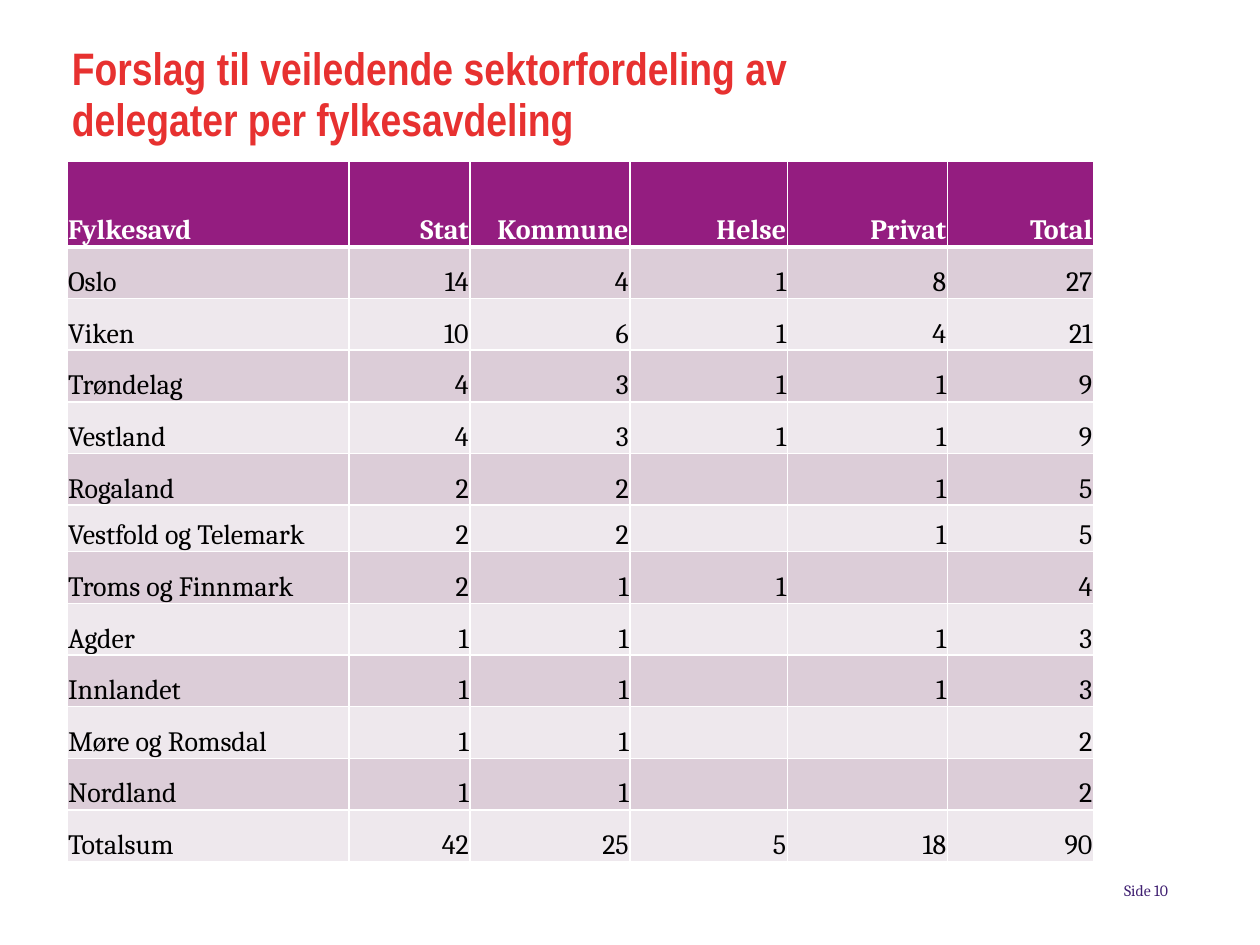
from lxml.etree import SubElement
from pptx import Presentation
from pptx.dml.color import RGBColor
from pptx.enum.text import MSO_ANCHOR, PP_ALIGN
from pptx.oxml.ns import qn
from pptx.util import Inches, Pt

TITLE = "Forslag til veiledende sektorfordeling av delegater per fylkesavdeling"
PAGE = "Side 10"
ROWS = [
    ("Fylkesavd", "Stat", "Kommune", "Helse", "Privat", "Total"),
    ("Oslo", "14", "4", "1", "8", "27"),
    ("Viken", "10", "6", "1", "4", "21"),
    ("Trøndelag", "4", "3", "1", "1", "9"),
    ("Vestland", "4", "3", "1", "1", "9"),
    ("Rogaland", "2", "2", "", "1", "5"),
    ("Vestfold og Telemark", "2", "2", "", "1", "5"),
    ("Troms og Finnmark", "2", "1", "1", "", "4"),
    ("Agder", "1", "1", "", "1", "3"),
    ("Innlandet", "1", "1", "", "1", "3"),
    ("Møre og Romsdal", "1", "1", "", "", "2"),
    ("Nordland", "1", "1", "", "", "2"),
    ("Totalsum", "42", "25", "5", "18", "90"),
]
COL_WIDTHS = [2.24, 0.96, 1.27, 1.25, 1.27, 1.16]
HEADER_HEIGHT, ROW_HEIGHT = 0.68, 0.41
SPECIAL_HEIGHTS = {0: HEADER_HEIGHT, 6: 0.37}

RED = RGBColor(0xE7, 0x31, 0x30)
INDIGO = RGBColor(0x3F, 0x1F, 0x71)
PURPLE = RGBColor(0x94, 0x1D, 0x80)
BAND_DARK = RGBColor(0xDC, 0xCD, 0xD8)
BAND_LIGHT = RGBColor(0xEE, 0xE8, 0xED)
WHITE = RGBColor(0xFF, 0xFF, 0xFF)
BLACK = RGBColor(0, 0, 0)


def add_run(p, text, font, size, color, bold=False):
    r = p.add_run()
    r.text = text
    r.font.name = font
    r.font.size = Pt(size)
    r.font.bold = bold
    r.font.color.rgb = color


def add_text_box(slide, left, top, width, height, anchor):
    sp = slide.shapes.add_textbox(Inches(left), Inches(top), Inches(width), Inches(height))
    tf = sp.text_frame
    tf.word_wrap = True
    tf.vertical_anchor = anchor
    tf.margin_left = tf.margin_top = tf.margin_right = tf.margin_bottom = 0
    return tf.paragraphs[0]


def set_borders(cell, widths):
    tc_pr = cell._tc.get_or_add_tcPr()
    for side, width in widths.items():
        ln = SubElement(tc_pr, qn(f"a:ln{side}"), w=str(Pt(width)))
        fill = SubElement(ln, qn("a:solidFill"))
        SubElement(fill, qn("a:srgbClr"), val=str(WHITE))


def format_cell(cell, text, row, col):
    set_borders(cell, {"L": 1, "R": 1, "T": 3 if row == 1 else 1, "B": 3 if row == 0 else 1})
    cell.fill.solid()
    cell.fill.fore_color.rgb = PURPLE if row == 0 else BAND_DARK if row % 2 else BAND_LIGHT
    cell.vertical_anchor = MSO_ANCHOR.BOTTOM
    cell.margin_left = cell.margin_top = cell.margin_right = Inches(0.01)
    cell.margin_bottom = 0
    p = cell.text_frame.paragraphs[0]
    p.alignment = PP_ALIGN.RIGHT if col else PP_ALIGN.LEFT
    if text:
        add_run(p, text, "Cambria", 16, BLACK if row else WHITE, row == 0)


def add_sector_table(slide):
    heights = [SPECIAL_HEIGHTS.get(i, ROW_HEIGHT) for i in range(len(ROWS))]
    table = slide.shapes.add_table(
        len(ROWS), len(COL_WIDTHS), Inches(0.53), Inches(1.28),
        Inches(sum(COL_WIDTHS)), Inches(sum(heights))).table
    for column, width in zip(table.columns, COL_WIDTHS):
        column.width = Inches(width)
    for row, (values, height) in enumerate(zip(ROWS, heights)):
        table.rows[row].height = Inches(height)
        for col, text in enumerate(values):
            format_cell(table.cell(row, col), text, row, col)


def main():
    prs = Presentation()
    prs.slide_width, prs.slide_height = Inches(10), Inches(7.5)
    slide = prs.slides.add_slide(prs.slide_layouts[6])

    p = add_text_box(slide, 0.57, 0.35, 6.47, 0.81, MSO_ANCHOR.TOP)
    p.line_spacing = Pt(29)
    add_run(p, TITLE, "Arial Narrow", 26, RED, True)

    p = add_text_box(slide, 7.02, 6.99, 2.25, 0.15, MSO_ANCHOR.MIDDLE)
    p.alignment = PP_ALIGN.RIGHT
    p.space_after = Pt(6)
    add_run(p, PAGE, "Cambria", 9, INDIGO)

    add_sector_table(slide)
    prs.save("out.pptx")


if __name__ == "__main__":
    main()
